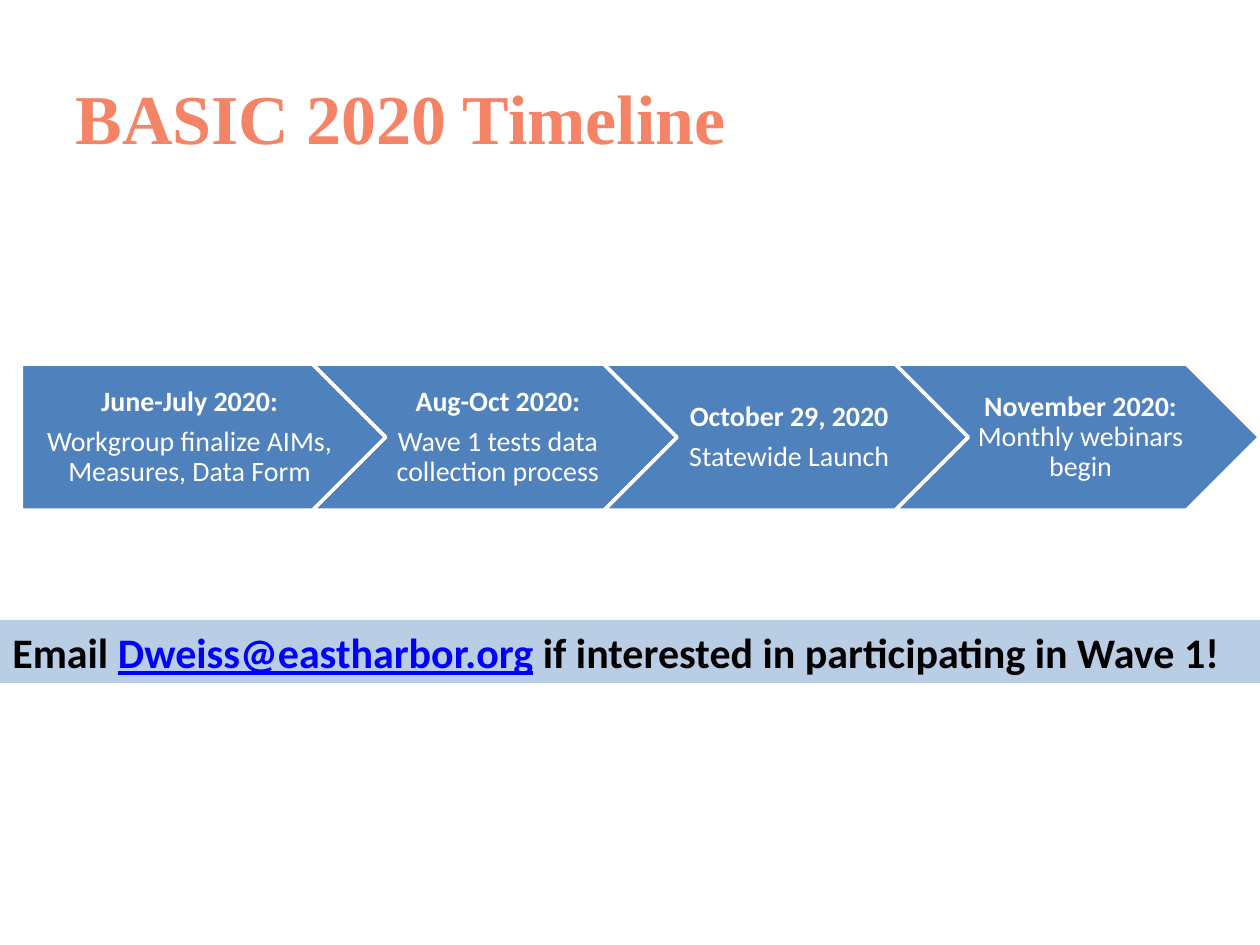
from dataclasses import dataclass

from pptx import Presentation
from pptx.dml.color import RGBColor
from pptx.enum.shapes import MSO_SHAPE
from pptx.enum.text import MSO_ANCHOR, PP_ALIGN
from pptx.util import Inches, Pt


@dataclass(frozen=True)
class Theme:
    title: RGBColor = RGBColor(0xF5, 0x84, 0x66)
    step: RGBColor = RGBColor(0x4F, 0x81, 0xBD)
    banner: RGBColor = RGBColor(0xB9, 0xCD, 0xE5)
    link: RGBColor = RGBColor(0x00, 0x00, 0xFF)
    white: RGBColor = RGBColor(0xFF, 0xFF, 0xFF)
    black: RGBColor = RGBColor(0x00, 0x00, 0x00)
    title_font: str = "Times New Roman"
    body_font: str = "Calibri"
    title_size: Pt = Pt(40)
    banner_size: Pt = Pt(24)
    step_size: Pt = Pt(16)


THEME = Theme()

# Each step is a list of paragraphs; the first run of the step is bold
STEPS = [
    [["June-July 2020:"], ["Workgroup finalize AIMs, Measures, Data Form"]],
    [["Aug-Oct 2020:"], ["Wave 1 tests data collection process"]],
    [["October 29, 2020"], ["Statewide Launch"]],
    [["November 2020: ", "Monthly webinars begin"]],
]
STEP_LEFT, STEP_TOP = 0.17, 2.89
STEP_W, STEP_H = 2.89, 1.16
STEP_PITCH = 0.8 * STEP_W
POINT_W = STEP_H / 2


def set_font(font, name, size, color, bold=None):
    font.name, font.size, font.bold = name, size, bold
    font.color.rgb = color


def add_title(s, text):
    sp = s.shapes.title
    sp.left, sp.top = Inches(0.5), Inches(0.3)
    sp.width, sp.height = Inches(9), Inches(1.25)
    tf = sp.text_frame
    tf.text = text
    tf.vertical_anchor = MSO_ANCHOR.MIDDLE
    p = tf.paragraphs[0]
    p.alignment = PP_ALIGN.LEFT
    set_font(p.font, THEME.title_font, THEME.title_size, THEME.title, True)


def add_block(s, kind, left, top, width, height, fill):
    sp = s.shapes.add_shape(kind, Inches(left), Inches(top), Inches(width), Inches(height))
    sp.shadow.inherit = False
    sp.fill.solid()
    sp.fill.fore_color.rgb = fill
    sp.line.fill.background()
    return sp


def add_step_text(s, left, width, inset, paragraphs):
    box = s.shapes.add_textbox(Inches(left), Inches(STEP_TOP), Inches(width), Inches(STEP_H))
    tf = box.text_frame
    tf.word_wrap = True
    tf.vertical_anchor = MSO_ANCHOR.MIDDLE
    tf.margin_left, tf.margin_right = Inches(inset), Inches(0.02)
    for i, runs in enumerate(paragraphs):
        p = tf.paragraphs[0] if i == 0 else tf.add_paragraph()
        p.alignment = PP_ALIGN.CENTER
        p.line_spacing = 0.9
        p.space_after = Pt(5.6)
        set_font(p.font, THEME.body_font, THEME.step_size, THEME.white)
        for j, text in enumerate(runs):
            r = p.add_run()
            r.text = text
            r.font.bold = i == j == 0


def add_step(s, index, paragraphs):
    first = index == 0
    left = STEP_LEFT + index * STEP_PITCH
    kind = MSO_SHAPE.PENTAGON if first else MSO_SHAPE.CHEVRON
    sp = add_block(s, kind, left, STEP_TOP, STEP_W, STEP_H, THEME.step)
    sp.line.color.rgb = THEME.white
    sp.line.width = Pt(2)
    if first:
        add_step_text(s, left, STEP_W - POINT_W / 2, 0.09, paragraphs)
    else:
        add_step_text(s, left + POINT_W, STEP_W - 2 * POINT_W, 0.07, paragraphs)


def add_banner(s, before, address, after):
    sp = add_block(s, MSO_SHAPE.RECTANGLE, 0, 4.92, 10, 0.5, THEME.banner)
    tf = sp.text_frame
    tf.vertical_anchor = MSO_ANCHOR.BOTTOM
    p = tf.paragraphs[0]
    p.alignment = PP_ALIGN.LEFT
    set_font(p.font, THEME.body_font, THEME.banner_size, THEME.black, True)
    for text in (before, address, after):
        r = p.add_run()
        r.text = text
        if text == address:
            r.font.color.rgb = THEME.link
            r.font.underline = True


def main():
    prs = Presentation()
    prs.slide_width, prs.slide_height = Inches(10), Inches(7.5)
    s = prs.slides.add_slide(prs.slide_layouts[5])

    # Heading
    add_title(s, "BASIC 2020 Timeline")

    # Contact banner
    add_banner(s, "Email ", "Dweiss@eastharbor.org",
               " if interested in participating in Wave 1!")

    # Timeline arrows
    for index, paragraphs in enumerate(STEPS):
        add_step(s, index, paragraphs)

    prs.save("out.pptx")


if __name__ == "__main__":
    main()
